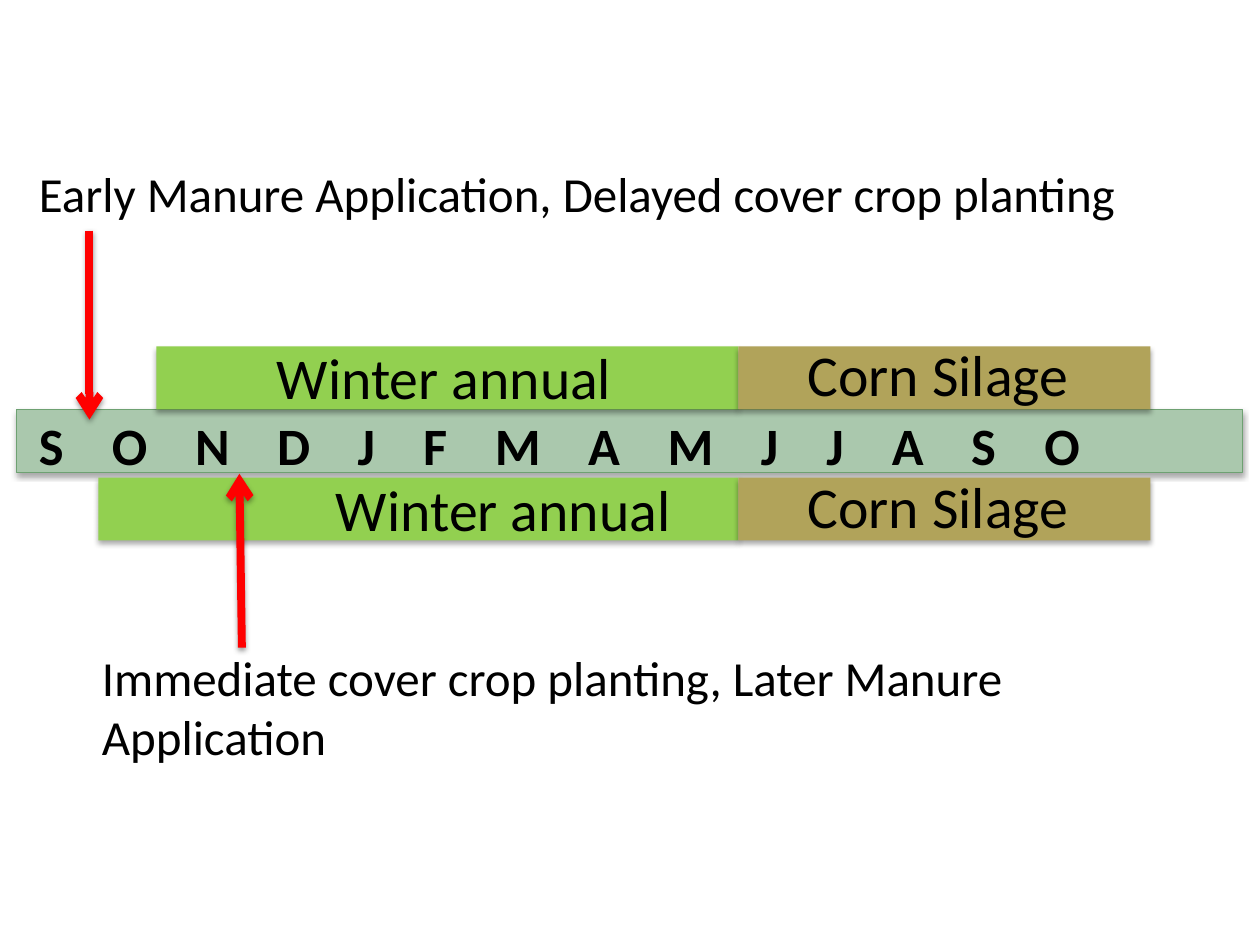
from itertools import accumulate

from lxml import etree
from pptx import Presentation
from pptx.dml.color import RGBColor
from pptx.enum.shapes import MSO_CONNECTOR as CONNECTOR, MSO_SHAPE as SHAPE
from pptx.enum.text import MSO_AUTO_SIZE as AUTO_SIZE, PP_ALIGN as ALIGN
from pptx.oxml.ns import qn
from pptx.util import Inches, Pt

COLORS = {
    "months": "AAC8AD", "months_edge": "6EA172", "winter": "92D050",
    "corn": "B1A35A", "arrow": "FF0000", "text": "000000",
}
CAPTION = {"size": Pt(28)}
CROP = {"size": Pt(33)}
MONTH = {"size": Pt(30), "bold": True}

MONTHS = "SONDJFMAMJJASO"
LETTER_WIDTHS = {"S": 0.2, "O": 0.28, "N": 0.27, "D": 0.26,
                 "J": 0.14, "F": 0.19, "M": 0.36, "A": 0.25}
MONTH_GAP = 0.38
CORN_LEFT, CORN_WIDTH, BAR_HEIGHT = 5.86, 3.27, 0.5


def rgb(name):
    return RGBColor.from_string(COLORS[name])


def add_shadow(sp, alpha, dist):
    """Give the shape a soft shadow straight below it."""
    sp_pr = sp._element.spPr
    effects = sp_pr.find(qn("a:effectLst"))
    if effects is None:
        effects = etree.SubElement(sp_pr, qn("a:effectLst"))
    shadow = etree.SubElement(effects, qn("a:outerShdw"), blurRad=str(Pt(3.1)),
                              dist=str(Pt(dist)), dir="5400000", rotWithShape="0")
    color = etree.SubElement(shadow, qn("a:srgbClr"), val="000000")
    etree.SubElement(color, qn("a:alpha"), val=str(alpha * 1000))


def add_bar(s, left, top, width, fill, edge=None):
    sp = s.shapes.add_shape(SHAPE.RECTANGLE, Inches(left), Inches(top),
                            Inches(width), Inches(BAR_HEIGHT))
    sp.fill.solid()
    sp.fill.fore_color.rgb = rgb(fill)
    if edge:
        sp.line.color.rgb = rgb(edge)
        sp.line.width = Pt(0.75)
    else:
        sp.line.fill.background()
    sp.shadow.inherit = False
    add_shadow(sp, alpha=35, dist=1.8)


def add_text(s, text, left, top, width, height, style, align=None, grow=False, tabs=()):
    box = s.shapes.add_textbox(Inches(left), Inches(top), Inches(width), Inches(height))
    tf = box.text_frame
    tf.word_wrap = True
    tf.auto_size = AUTO_SIZE.SHAPE_TO_FIT_TEXT if grow else AUTO_SIZE.NONE
    p = tf.paragraphs[0]
    p.alignment = align
    if tabs:
        tab_list = etree.SubElement(p._p.get_or_add_pPr(), qn("a:tabLst"))
        for pos in tabs:
            etree.SubElement(tab_list, qn("a:tab"), pos=str(Inches(pos)), algn="l")
    r = p.add_run()
    r.text = text
    for name, value in {"name": "Calibri", **style}.items():
        setattr(r.font, name, value)
    r.font.color.rgb = rgb("text")


def add_arrow(s, x1, y1, x2, y2):
    line = s.shapes.add_connector(CONNECTOR.STRAIGHT, Inches(x1), Inches(y1),
                                  Inches(x2), Inches(y2))
    line.line.color.rgb = rgb("arrow")
    line.line.width = Pt(4.5)
    etree.SubElement(line.line._get_or_add_ln(), qn("a:tailEnd"), type="arrow")
    add_shadow(line, alpha=38, dist=1.6)


def add_months(s):
    """Draw the month band, each letter at a tab stop one equal gap after the last."""
    add_bar(s, 0.13, 3.25, 9.73, "months", "months_edge")
    tabs = list(accumulate(LETTER_WIDTHS[m] + MONTH_GAP for m in MONTHS[:-1]))
    add_text(s, "\t".join(MONTHS), 0.21, 3.23, 9.78, 0.61, MONTH, grow=True, tabs=tabs)


def add_rotation(s, top, winter_left, winter_text, corn_text):
    """Draw a winter annual bar followed by corn silage; labels are (left, top)."""
    add_bar(s, winter_left, top, CORN_LEFT - winter_left, "winter")
    add_bar(s, CORN_LEFT, top, CORN_WIDTH, "corn")
    add_text(s, "Winter annual", *winter_text, 5.27, BAR_HEIGHT, CROP, ALIGN.CENTER)
    add_text(s, "Corn Silage", *corn_text, 2.83, BAR_HEIGHT, CROP, ALIGN.CENTER)


def main():
    prs = Presentation()
    prs.slide_width, prs.slide_height = Inches(10), Inches(7.5)
    s = prs.slides.add_slide(prs.slide_layouts[6])

    add_months(s)
    add_rotation(s, 3.79, 0.78, (1.36, 3.71), (6.03, 3.69))
    add_rotation(s, 2.75, 1.24, (0.89, 2.66), (6.03, 2.64))
    add_arrow(s, 0.71, 1.83, 0.71, 3.33)
    add_arrow(s, 1.92, 5.14, 1.9, 3.76)
    add_text(s, "Early Manure Application, Delayed cover crop planting",
             0.21, 1.25, 9.36, 0.57, CAPTION, grow=True)
    add_text(s, "Immediate cover crop planting, Later Manure Application",
             0.71, 5.09, 9.15, 0.57, CAPTION, grow=True)

    prs.save("out.pptx")


if __name__ == "__main__":
    main()
